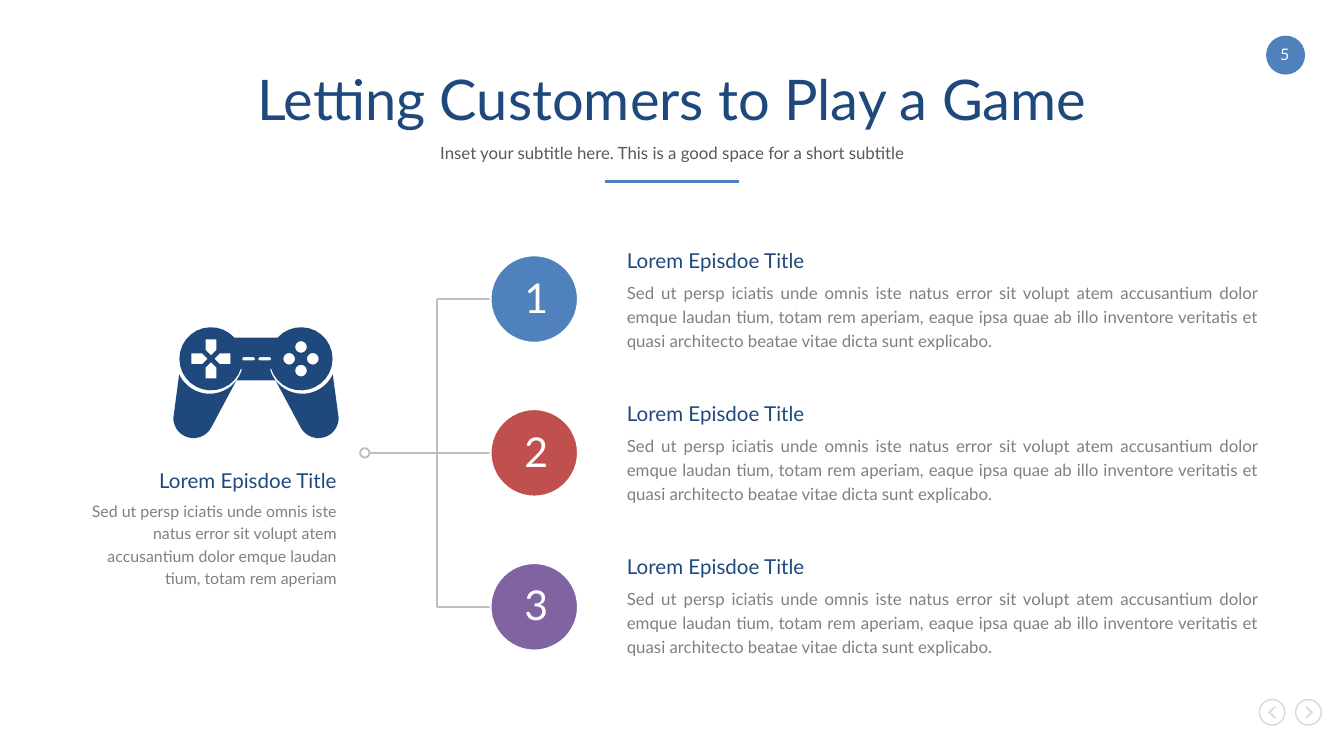
"""Build the game slide: a gamepad branching to three numbered episodes."""
from dataclasses import dataclass
from math import cos, radians, sin

from lxml import etree
from pptx import Presentation
from pptx import util as u
from pptx.dml.color import RGBColor
from pptx.enum import shapes, text
from pptx.oxml.ns import qn


@dataclass(frozen=True)
class Theme:
    font: str = "Lato"
    navy: str = "1F497D"
    blue: str = "4F81BD"
    red: str = "C0504D"
    purple: str = "8064A2"
    white: str = "FFFFFF"
    dark: str = "595959"
    gray: str = "808080"
    rule: str = "BFBFBF"
    pale: str = "D9D9D9"
    title: float = 30
    number: float = 22
    heading: float = 11
    body: float = 9
    small: float = 8.5


def write(box, *lines, align="CENTER", anchor="TOP", fit="NONE", leading=None, after=0):
    frame = box.text_frame
    frame.margin_left = frame.margin_right = frame.margin_top = frame.margin_bottom = 0
    frame.word_wrap = True
    frame.auto_size = text.MSO_AUTO_SIZE[fit]
    frame.vertical_anchor = text.MSO_ANCHOR[anchor]
    for index, (words, size, color) in enumerate(lines):
        para = frame.add_paragraph() if index else frame.paragraphs[0]
        para.alignment = text.PP_ALIGN[align]
        para.space_before, para.space_after = u.Pt(0), u.Pt(after)
        if leading:
            para.line_spacing = u.Pt(leading)
        span = para.add_run()
        span.text = words
        span.font.name, span.font.size = theme.font, u.Pt(size)
        span.font.color.rgb = RGBColor.from_string(color)


def arc(x, y, radius, start, end, steps=24):
    angles = [radians(start + (end - start) * step / steps) for step in range(steps + 1)]
    return [(x + radius * cos(angle), y + radius * sin(angle)) for angle in angles]


theme = Theme()
deck = Presentation()
deck.slide_width = u.Inches(10)
deck.slide_height = deck.slide_width * 9 // 16
cell = deck.slide_width / 100
page = deck.slides.add_slide(deck.slide_layouts[0])

headings = [
    (page.shapes.title, 4.8, 5, "Letting Customers to Play a Game", theme.title, theme.navy),
    (page.placeholders[1], 10.1, 2.5,
     "Inset your subtitle here. This is a good space for a short subtitle", theme.body, theme.dark),
]
for box, top, height, words, size, color in headings:
    box.left, box.top, box.width, box.height = [int(n * cell) for n in (6.5, top, 87, height)]
    write(box, (words, size, color), anchor="MIDDLE")

pad_middle, stick_left, stick_right, stick_y = 19.05, 15.7, 22.4, 26.7
left_half = [
    (pad_middle, 28.3), (17.6, 28.3),
    *arc(14.4, 31.1, 1.5, 27, 180),
    *arc(15.6, 26.8, 2.5, 155, 17),
    *arc(stick_left, stick_y, 2.35, 17, 318),
    (pad_middle, 25.13),
]
gamepad = [left_half + [(2 * pad_middle - x, y) for x, y in reversed(left_half)]]
arrow_key = [(0.25, 0), (0.65, 0.4), (1.45, 0.4), (1.45, -0.4), (0.65, -0.4)]
for turn in range(4):
    c, s = cos(radians(90 * turn)), sin(radians(90 * turn))
    gamepad.append([(stick_left + x * c - y * s, stick_y + x * s + y * c) for x, y in arrow_key])
    gamepad.append(arc(stick_right + 0.88 * c, stick_y + 0.88 * s, 0.43, 0, 360))
for left in (18.15, 19.35):
    gamepad.append(arc(left, stick_y, 0.12, 90, 270) + arc(left + 0.7, stick_y, 0.12, -90, 90))

outlines = [(gamepad, theme.navy)]
arrow_y = 53
chevron = [(0.3, 0), (-0.17, -0.45), (-0.27, -0.37), (0.12, 0), (-0.27, 0.37), (-0.17, 0.45)]
for middle, way in ((94.65, -1), (97.4, 1)):
    outlines.append(([[(middle + way * x, arrow_y + y) for x, y in chevron]], theme.pale))
for contours, color in outlines:
    points = [[(x * cell, y * cell) for x, y in contour] for contour in contours]
    builder = page.shapes.build_freeform(*points[0][0])
    builder.add_line_segments(points[0][1:])
    for hole in points[1:]:
        builder.move_to(*hole[0])
        builder.add_line_segments(hole[1:])
    outline = builder.convert_to_shape()
    outline.shadow.inherit = False
    outline.fill.solid()
    outline.fill.fore_color.rgb = RGBColor.from_string(color)
    outline.line.fill.background()

row_pitch, first_row, trunk, badge_left = 11.45, 22.25, 32.5, 36.5
rows = [first_row + row_pitch * index for index in range(3)]
lines = [(45, 13.5, 55, 13.5, theme.blue, 1.5), (trunk, rows[0], trunk, rows[2], theme.rule, 1),
         (27.5, rows[1], trunk, rows[1], theme.rule, 1)]
lines += [(trunk, y, badge_left, y, theme.rule, 1) for y in rows]
for *ends, color, width in lines:
    line = page.shapes.add_connector(
        shapes.MSO_CONNECTOR.STRAIGHT, *[int(n * cell) for n in ends])
    line.line.color.rgb = RGBColor.from_string(color)
    line.line.width = u.Pt(width)
    etree.SubElement(line._element.spPr, qn("a:effectLst"))

circles = [(badge_left + 3.25, y, 6.5, fill, theme.white, 1)
           for y, fill in zip(rows, (theme.blue, theme.red, theme.purple))]
circles += [
    (27.15, rows[1], 0.7, theme.white, theme.rule, 1),
    (95.65, 4.1, 2.9, theme.blue, None, 0),
    (94.65, arrow_y, 1.9, None, theme.pale, 0.75),
    (97.35, arrow_y, 1.9, None, theme.pale, 0.75),
]
for x, y, size, fill, edge, width in circles:
    circle = page.shapes.add_shape(
        shapes.MSO_SHAPE.OVAL,
        *[int(n * cell) for n in (x - size / 2, y - size / 2, size, size)])
    circle.shadow.inherit = False
    for part, color in ((circle.fill, fill), (circle.line.fill, edge)):
        if color:
            part.solid()
            part.fore_color.rgb = RGBColor.from_string(color)
        else:
            part.background()
    if edge:
        circle.line.width = u.Pt(width)

heading = ("Lorem Episdoe Title", theme.heading, theme.navy)
opening = ("Sed ut persp iciatis unde omnis iste natus error sit volupt atem "
           "accusantium dolor emque laudan tium, totam rem aperiam")
episode = opening + (", eaque ipsa quae ab illo inventore veritatis et quasi "
                     "architecto beatae vitae dicta sunt explicabo.")
blocks = [
    ((94.4, 3.35, 2.4, 1.4), [("5", theme.small, theme.white)], {"fit": "SHAPE_TO_FIT_TEXT"}),
    ((6.55, 35, 18.5, 8.8), [heading, (opening, theme.small, theme.gray)],
     {"align": "RIGHT", "leading": 12, "after": 3, "fit": "SHAPE_TO_FIT_TEXT"}),
]
for index, y in enumerate(rows):
    blocks.append(((46.64, 18.5 + 11.38 * index, 46.9, 7.7),
                   [heading, (episode, theme.body, theme.gray)],
                   {"align": "JUSTIFY", "leading": 13, "after": 3, "fit": "SHAPE_TO_FIT_TEXT"}))
    blocks.append(((37.3, y - 2, 5.2, 3.6), [(str(index + 1), theme.number, theme.white)], {}))
for place, words, layout in blocks:
    write(page.shapes.add_textbox(*[int(n * cell) for n in place]), *words, **layout)

deck.save("out.pptx")
